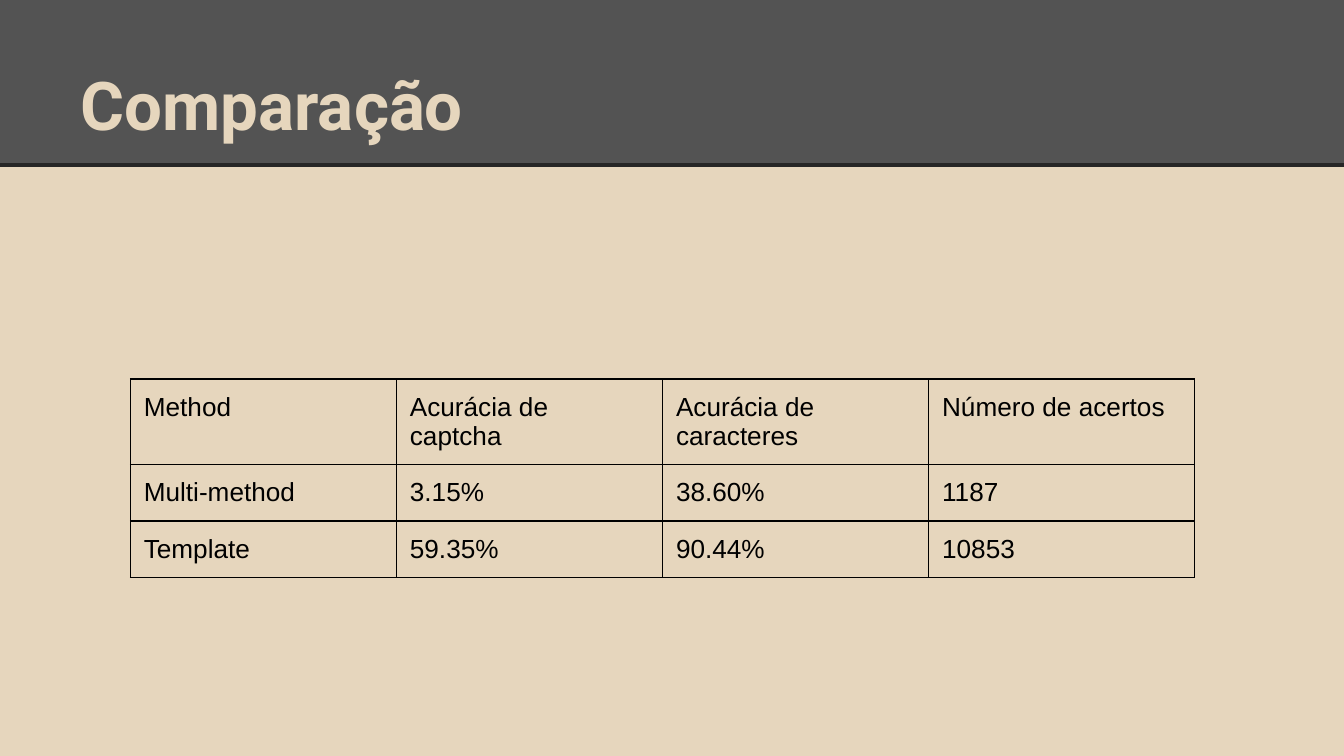
from lxml.etree import SubElement
from pptx import Presentation
from pptx.dml.color import RGBColor
from pptx.enum.shapes import MSO_CONNECTOR as CONNECTOR, MSO_SHAPE as SHAPE
from pptx.enum.text import MSO_ANCHOR as ANCHOR, MSO_AUTO_SIZE as AUTO, PP_ALIGN as ALIGN
from pptx.oxml import parse_xml
from pptx.oxml.ns import nsdecls, qn
from pptx.util import Inches, Pt

WIDTH = 10
HEIGHT = WIDTH * 9 / 16
BAND_HEIGHT = 1.23
SAND, GREY, DARK, BLACK = "E6D6BD", "535353", "262626", "000000"
COL_WIDTH, ROW_HEIGHT = 1.98, 0.42
RESULTS = [
    ["Method", "Acurácia de\ncaptcha", "Acurácia de caracteres", "Número de acertos"],
    ["Multi-method", "3.15%", "38.60%", "1187"],
    ["Template", "59.35%", "90.44%", "10853"],
]


def rgb(color):
    """Turn a hex string into a colour."""
    return RGBColor.from_string(color)


def format_text(tf, font, size, color, bold=False):
    """Format every run of a text frame, aligned left."""
    for p in tf.paragraphs:
        p.alignment = ALIGN.LEFT
        for r in p.runs:
            r.font.name, r.font.size, r.font.bold = font, Pt(size), bold
            r.font.color.rgb = rgb(color)


def set_insets(box, inset=0.1):
    """Give a text frame or cell equal margins."""
    box.margin_left = box.margin_right = Inches(inset)
    box.margin_top = box.margin_bottom = Inches(inset)


def add_band(s):
    """Draw the header band and the rule along its foot."""
    band = s.shapes.add_shape(SHAPE.RECTANGLE, 0, 0, Inches(WIDTH), Inches(BAND_HEIGHT))
    band.shadow.inherit = False
    band.fill.solid()
    band.fill.fore_color.rgb = rgb(GREY)
    band.line.fill.background()
    y = Inches(BAND_HEIGHT)
    rule = s.shapes.add_connector(CONNECTOR.STRAIGHT, 0, y, Inches(WIDTH), y)
    rule.line.color.rgb = rgb(DARK)
    rule.line.width = Pt(2.25)
    SubElement(rule.element.spPr, qn("a:effectLst"))


def set_title(s, text):
    """Place the title at the bottom of the band, in front of it."""
    title = s.shapes.title
    title.left, title.top = Inches(0.5), Inches(0.23)
    title.width, title.height = Inches(WIDTH - 2 * 0.5), Inches(0.94)
    tf = title.text_frame
    tf.text = text
    tf.word_wrap, tf.auto_size = True, AUTO.NONE
    tf.vertical_anchor = ANCHOR.BOTTOM
    set_insets(tf)
    format_text(tf, "Roboto", 36, SAND, bold=True)
    title.element.getparent().append(title.element)


def set_borders(cell, color, width):
    """Line all four sides of a cell."""
    tcPr = cell._tc.get_or_add_tcPr()
    for i, side in enumerate("LRTB"):
        tcPr.insert(i, parse_xml(
            f'<a:ln{side} {nsdecls("a")} w="{Pt(width)}"><a:solidFill>'
            f'<a:srgbClr val="{color}"/></a:solidFill></a:ln{side}>'))


def add_results(s, left, top, rows):
    """Add an outlined table without fills."""
    n_rows, n_cols = len(rows), len(rows[0])
    table = s.shapes.add_table(
        n_rows, n_cols, Inches(left), Inches(top),
        Inches(n_cols * COL_WIDTH), Inches(n_rows * ROW_HEIGHT)).table
    table.first_row = table.horz_banding = False
    for row, values in zip(table.rows, rows):
        for cell, value in zip(row.cells, values):
            cell.text_frame.text = value
            cell.fill.background()
            set_insets(cell)
            set_borders(cell, BLACK, 0.75)
            format_text(cell.text_frame, "Arial", 14, BLACK)


def main():
    """Build and save the slide."""
    prs = Presentation()
    prs.slide_width, prs.slide_height = Inches(WIDTH), Inches(HEIGHT)
    s = prs.slides.add_slide(prs.slide_layouts[5])
    s.background.fill.solid()
    s.background.fill.fore_color.rgb = rgb(SAND)
    add_band(s)
    set_title(s, "Comparação")
    add_results(s, 0.97, 2.82, RESULTS)
    prs.save("out.pptx")


if __name__ == "__main__":
    main()
